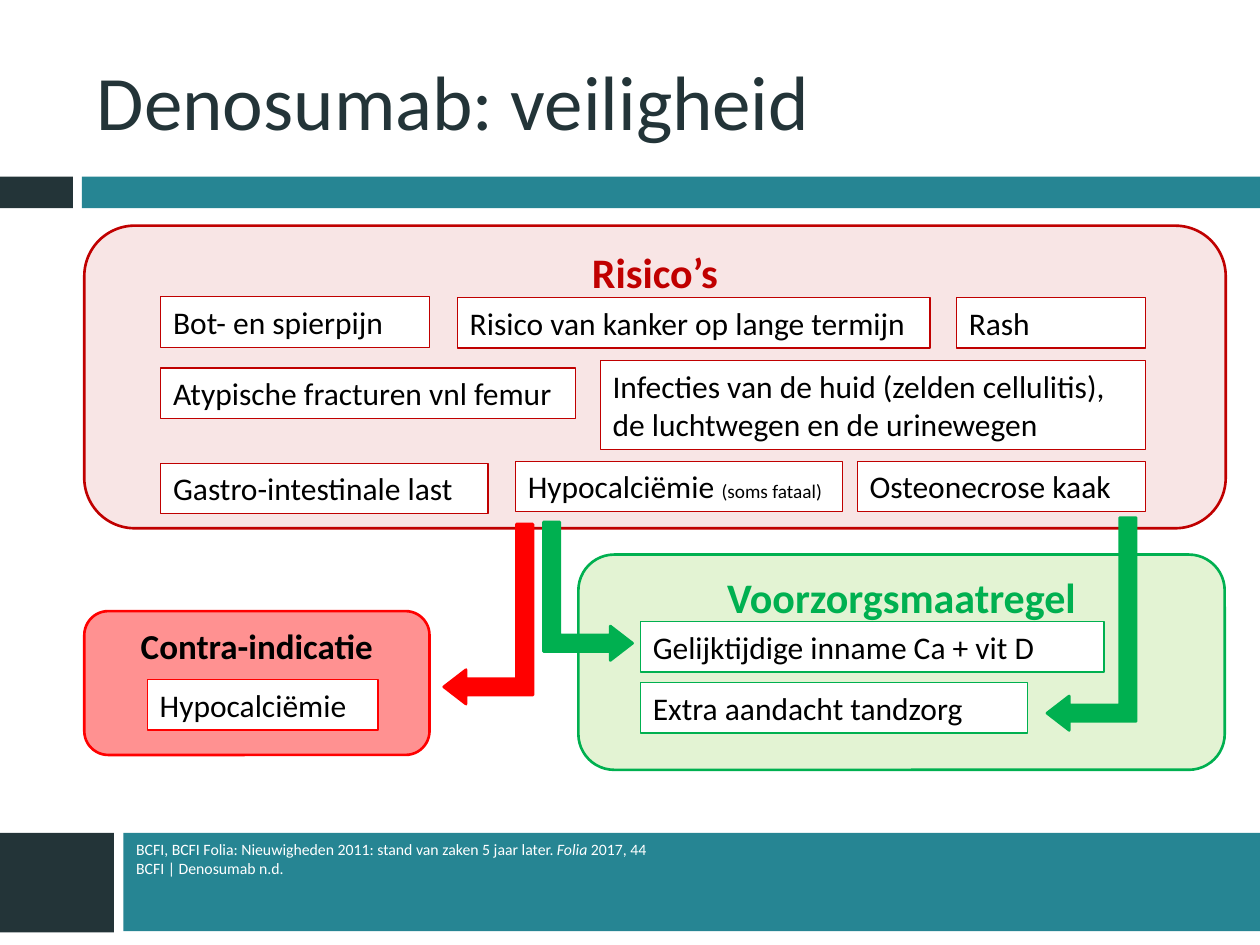
"""Build the slide on the safety of denosumab: risks, contraindication and precautions."""
from lxml import etree
from pptx import Presentation
from pptx import util as u
from pptx.dml.color import RGBColor
from pptx.enum import shapes, text
from pptx.oxml.ns import qn

COLOURS = {
    "dark": "233438", "teal": "268593", "white": "FFFFFF", "black": "000000",
    "crimson": "C00000", "red": "FF0000", "green": "00B050", "lime": "92D050",
}


def write(para, words, size, colour="black", bold=False, italic=False):
    span = para.add_run()
    span.text = words
    span.font.name = "Calibri"
    span.font.size = u.Pt(size)
    span.font.bold = bold
    span.font.italic = italic
    span.font.color.rgb = RGBColor.from_string(COLOURS[colour])


def draw(kind, place, fill, line=None, width=0.75, opacity=100):
    box = slide.shapes.add_shape(kind, *(u.Cm(length) for length in place))
    box.shadow.inherit = False
    box.fill.solid()
    box.fill.fore_color.rgb = RGBColor.from_string(COLOURS[fill])
    if opacity < 100:
        colour = box.fill._xPr.find(qn("a:solidFill"))[0]
        etree.SubElement(colour, qn("a:alpha")).set("val", str(opacity * 1000))
    if line:
        box.line.color.rgb = RGBColor.from_string(COLOURS[line])
        box.line.width = u.Pt(width)
    else:
        box.line.fill.background()
    return box


deck = Presentation()
deck.slide_width, deck.slide_height = u.Cm(25.4), u.Cm(19.05)
page = slide = deck.slides.add_slide(deck.slide_layouts[1])
title, source = page.placeholders

bars = [
    ((0, 3.56, 1.47, 0.64), "dark"),
    ((1.65, 3.56, 23.75, 0.64), "teal"),
    ((0, 16.79, 2.3, 2.01), "dark"),
    ((2.49, 16.79, 22.91, 1.98), "teal"),
]
for place, fill in bars:
    draw(shapes.MSO_SHAPE.RECTANGLE, place, fill)

placeholders = [
    (title, (1.7, 0.64, 22.66, 2.74), text.MSO_ANCHOR.MIDDLE),
    (source, (2.49, 16.81, 21.64, 1.96), text.MSO_ANCHOR.TOP),
]
for box, place, anchor in placeholders:
    box.left, box.top, box.width, box.height = (u.Cm(length) for length in place)
    box.text_frame.vertical_anchor = anchor
    box.text_frame.auto_size = text.MSO_AUTO_SIZE.NONE
    box.text_frame.paragraphs[0].alignment = text.PP_ALIGN.LEFT
    page.shapes._spTree.append(box._element)

write(title.text_frame.paragraphs[0], "Denosumab: veiligheid", size=44, colour="dark")

para = source.text_frame.paragraphs[0]
para.space_before = u.Pt(0)
properties = para._p.get_or_add_pPr()
properties.set("marL", "0")
properties.set("indent", "0")
etree.SubElement(properties, qn("a:buNone"))
write(para, "BCFI, BCFI Folia: Nieuwigheden 2011: stand van zaken 5 jaar later. ", size=9, colour="white")
write(para, "Folia", size=9, colour="white", italic=True)
write(para, " 2017, 44", size=9, colour="white")
para.add_line_break()
write(para, "BCFI | Denosumab n.d.", size=9, colour="white")

panels = [
    ("Risico’s", (1.7, 4.55, 23.01, 6.1), "crimson", 10, "crimson", 24, "crimson"),
    ("Contra-indicatie", (1.7, 12.32, 6.96, 2.9), "red", 43, "red", 20, "black"),
    ("Voorzorgsmaatregel", (11.66, 11.18, 13.03, 4.34), "lime", 25, "green", 24, "green"),
]
for heading, place, fill, opacity, line, size, colour in panels:
    box = draw(shapes.MSO_SHAPE.ROUNDED_RECTANGLE, place, fill, line, 1.5, opacity)
    box.text_frame.vertical_anchor = text.MSO_ANCHOR.TOP
    para = box.text_frame.paragraphs[0]
    para.alignment = text.PP_ALIGN.CENTER
    write(para, heading, size=size, colour=colour, bold=True)

labels = [
    ("Bot- en spierpijn", "", 3.24, 5.98, 5.42, "crimson"),
    ("Risico van kanker op lange termijn", "", 9.22, 6, 9.53, "crimson"),
    ("Rash", "", 19.28, 6, 3.82, "crimson"),
    ("Atypische fracturen vnl femur", "", 3.24, 7.42, 8.36, "crimson"),
    ("Infecties van de huid (zelden cellulitis), de luchtwegen en de urinewegen", "",
     12.1, 7.27, 11, "crimson"),
    ("Gastro-intestinale last", "", 3.24, 9.34, 6.6, "crimson"),
    ("Hypocalciëmie ", "(soms fataal)", 10.39, 9.3, 6.6, "crimson"),
    ("Osteonecrose kaak", "", 17.28, 9.3, 5.82, "crimson"),
    ("Hypocalciëmie", "", 2.97, 13.7, 4.65, "red"),
    ("Gelijktijdige inname Ca + vit D", "", 12.91, 12.53, 9.35, "green"),
    ("Extra aandacht tandzorg", "", 12.91, 13.76, 7.8, "green"),
]
for words, remark, left, top, width, line in labels:
    height = 1.8 if len(words) > 40 else 1.02
    box = draw(shapes.MSO_SHAPE.RECTANGLE, (left, top, width, height), "white", line)
    box.text_frame.word_wrap = True
    box.text_frame.vertical_anchor = text.MSO_ANCHOR.TOP
    para = box.text_frame.paragraphs[0]
    para.alignment = text.PP_ALIGN.LEFT
    write(para, words, size=18)
    if remark:
        write(para, remark, size=11)

arrows = [
    ((8.03, 11.48, 3.63, 1.8), "red", 90, ["flipV"]),
    ((10.46, 11.02, 2.79, 1.8), "green", 270, ["flipH", "flipV"]),
    ((19.86, 11.68, 4.29, 1.8), "green", 90, ["flipV"]),
]
for place, colour, rotation, flips in arrows:
    arrow = draw(shapes.MSO_SHAPE.BENT_UP_ARROW, place, colour, colour, 1.5)
    arrow.rotation = rotation
    for index, ratio in enumerate((0.185, 0.193, 0.25)):
        arrow.adjustments[index] = ratio
    for flip in flips:
        arrow._element.spPr.find(qn("a:xfrm")).set(flip, "1")

deck.save("out.pptx")
